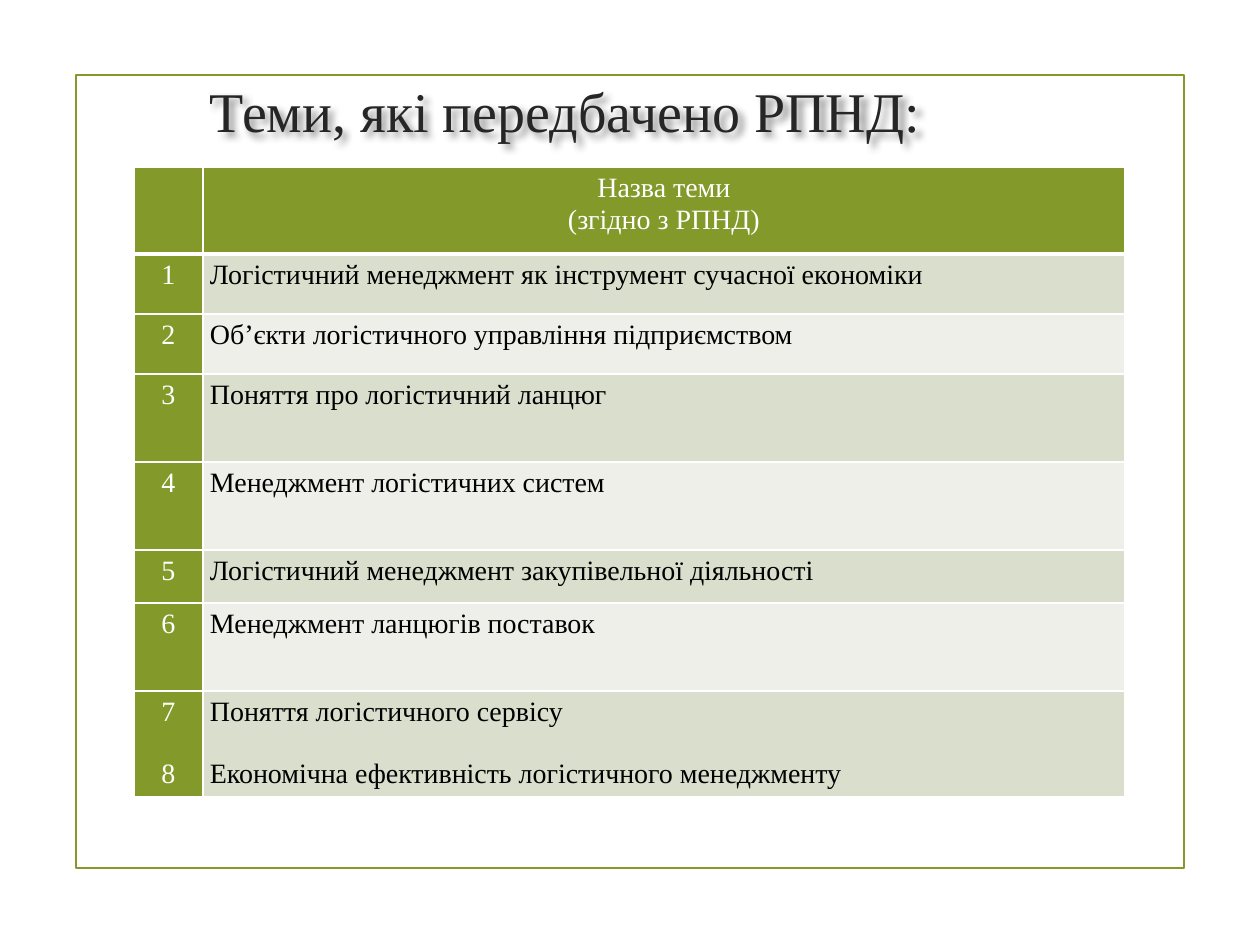
from lxml import etree
from pptx import Presentation
from pptx.dml.color import RGBColor
from pptx.enum.shapes import MSO_SHAPE
from pptx.enum.text import MSO_ANCHOR, PP_ALIGN
from pptx.oxml import parse_xml
from pptx.oxml.ns import nsdecls, qn
from pptx.util import Emu, Pt

CENTER, JUSTIFY = PP_ALIGN.CENTER, PP_ALIGN.JUSTIFY
FONT = "Times New Roman"
COLORS = {"olive": "83992A", "dark_band": "D9DECD", "light_band": "EDEFE8",
          "white": "FFFFFF", "black": "000000", "title": "262626"}

# Content: (numbers, topics, row height); several topics may share a row
TITLE = "Теми, які передбачено РПНД:"
HEADER = ["Назва теми", "(згідно з РПНД)"]
HEADER_HEIGHT = 87
TOPICS = [
    (["1"], ["Логістичний менеджмент як інструмент сучасної економіки"], 60),
    (["2"], ["Об’єкти логістичного управління підприємством"], 60),
    (["3"], ["Поняття про логістичний ланцюг"], 88),
    (["4"], ["Менеджмент логістичних систем"], 88),
    (["5"], ["Логістичний менеджмент закупівельної діяльності"], 53),
    (["6"], ["Менеджмент ланцюгів поставок"], 88),
    (["7", "8"], ["Поняття логістичного сервісу",
                  "Економічна ефективність логістичного менеджменту"], 106),
]
COLUMNS = [69, 922]
TABLE_LEFT, TABLE_TOP = 134, 167


def px(n):
    return Emu(round(n * 914400 / 126))


def rgb(name):
    return RGBColor.from_string(COLORS[name])


def style(paragraph, size, color, align):
    paragraph.alignment = align
    font = paragraph.font
    font.name, font.size, font.bold = FONT, Pt(size), False
    font.color.rgb = rgb(color)
    for run in paragraph.runs:
        run.font.name, run.font.size = FONT, Pt(size)
        run.font.color.rgb = rgb(color)


def add_borders(cell, bottom):
    props = cell._tc.get_or_add_tcPr()
    widths = {"lnL": 1, "lnR": 1, "lnT": 1, "lnB": bottom}
    for index, (side, width) in enumerate(widths.items()):
        props.insert(index, parse_xml(
            f'<a:{side} {nsdecls("a")} w="{Pt(width)}"><a:solidFill>'
            f'<a:srgbClr val="{COLORS["white"]}"/></a:solidFill></a:{side}>'))


def fill_cell(cell, lines, fill, color, align, gap=0, bottom=1):
    cell.fill.solid()
    cell.fill.fore_color.rgb = rgb(fill)
    cell.margin_left = cell.margin_right = px(7)
    cell.margin_top, cell.margin_bottom = px(6), px(5)
    cell.text_frame.text = "\n".join(lines)
    for index, paragraph in enumerate(cell.text_frame.paragraphs):
        style(paragraph, 16, color, align)
        if index and gap:
            paragraph.space_before = Pt(gap)
    add_borders(cell, bottom)


prs = Presentation()
prs.slide_width, prs.slide_height = px(1260), px(945)
slide = prs.slides.add_slide(prs.slide_layouts[5])

# Frame
frame = slide.shapes.add_shape(MSO_SHAPE.RECTANGLE, px(76), px(75), px(1108), px(793))
frame.shadow.inherit = False
frame.fill.background()
frame.line.color.rgb = rgb("olive")
frame.line.width = Pt(1.25)

# Title with a soft shadow
title = slide.shapes.title
title.left, title.top, title.width, title.height = px(44), px(66), px(1043), px(89)
title.text_frame.text = TITLE
title.text_frame.vertical_anchor = MSO_ANCHOR.MIDDLE
style(title.text_frame.paragraphs[0], 32, "title", CENTER)
effects = etree.SubElement(title._element.spPr, qn("a:effectLst"))
effects.append(parse_xml(
    f'<a:outerShdw {nsdecls("a")} blurRad="{Pt(4)}" dist="{Pt(3)}" dir="2700000">'
    f'<a:srgbClr val="{COLORS["black"]}"><a:alpha val="43000"/></a:srgbClr></a:outerShdw>'))

# Table of topics
heights = [HEADER_HEIGHT] + [height for _, _, height in TOPICS]
table = slide.shapes.add_table(len(heights), len(COLUMNS), px(TABLE_LEFT), px(TABLE_TOP),
                               px(sum(COLUMNS)), px(sum(heights))).table
table.first_row = table.horz_banding = False
for column, width in zip(table.columns, COLUMNS):
    column.width = px(width)
for row, height in zip(table.rows, heights):
    row.height = px(height)

for index, lines in enumerate([[], HEADER]):
    fill_cell(table.cell(0, index), lines, "olive", "white", CENTER, bottom=3)
for index, (numbers, topics, _) in enumerate(TOPICS, start=1):
    band = "dark_band" if index % 2 else "light_band"
    fill_cell(table.cell(index, 0), numbers, "olive", "white", CENTER, gap=17.5)
    fill_cell(table.cell(index, 1), topics, band, "black", JUSTIFY, gap=17.5)

prs.save("out.pptx")
